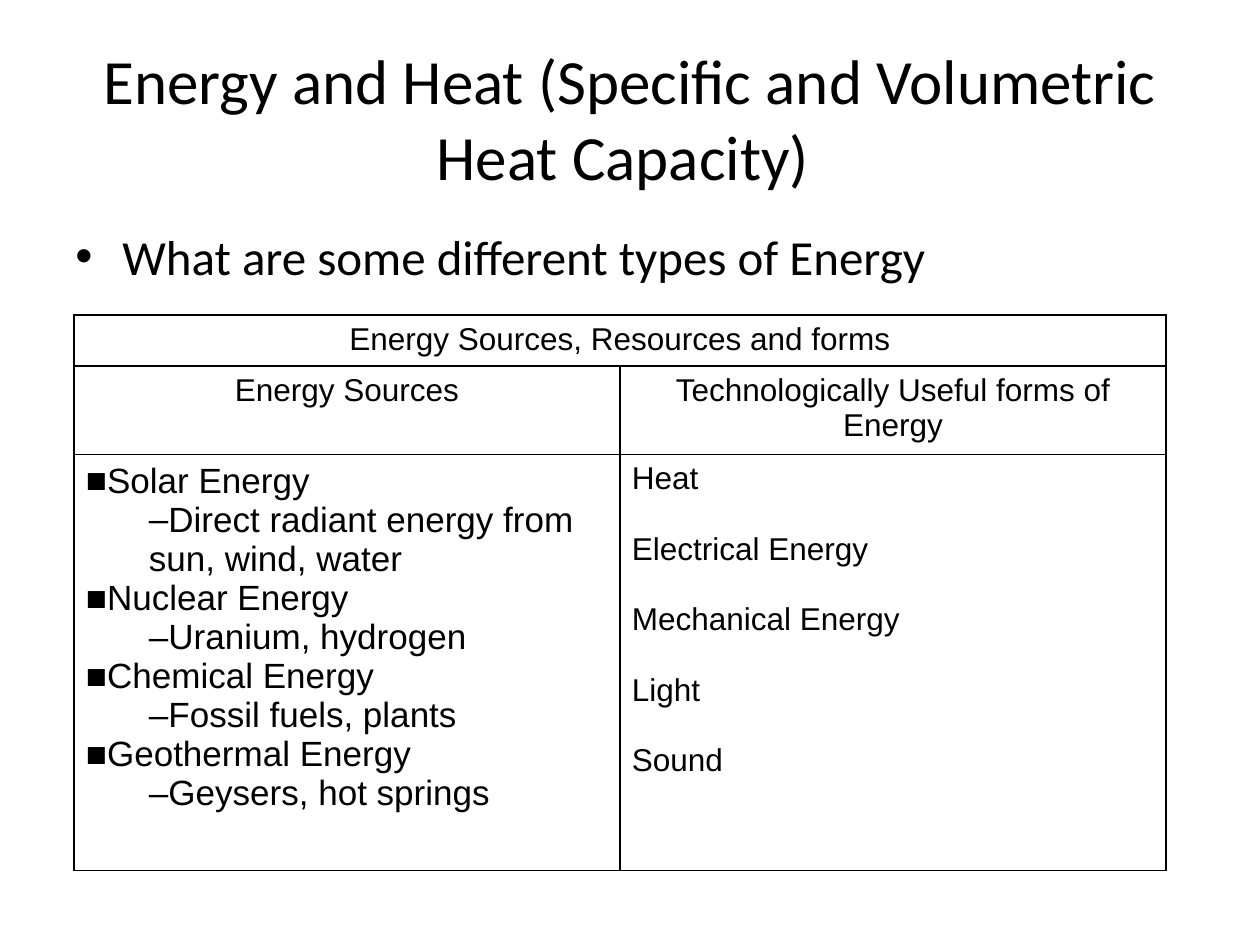
from lxml import etree
from pptx import Presentation
from pptx.dml.color import RGBColor
from pptx.enum.text import MSO_ANCHOR, PP_ALIGN
from pptx.oxml.ns import qn
from pptx.util import Emu, Pt

SCALE = 914400 / 126
BLACK = "000000"
BODY = {"size": Pt(18), "name": "Arial"}
SOURCE = {"size": Pt(20), "name": "Arial"}
CENTER = {"alignment": PP_ALIGN.CENTER}
GAP = {"space_before": Pt(20.1)}
MARGINS = {"margin_left": 12, "margin_right": 12, "margin_top": 7, "margin_bottom": 6}


def px(n):
    return Emu(round(n * SCALE))


def color(value):
    return RGBColor.from_string(value)


def apply(obj, values):
    for name, value in values.items():
        setattr(obj, name, value)


class SlideBuilder:
    def __init__(self, prs):
        self.s = prs.slides.add_slide(prs.slide_layouts[6])
        self.s.background.fill.solid()
        self.s.background.fill.fore_color.rgb = color("FFFFFF")

    def bullet(self, p, char, left=0, indent=0):
        pPr = p._p.get_or_add_pPr()
        pPr.set("marL", str(px(left)))
        pPr.set("indent", str(px(indent)))
        etree.SubElement(pPr, qn("a:buFont"), typeface="Arial")
        etree.SubElement(pPr, qn("a:buChar"), char=char)

    def paragraph(self, tf, text, font, layout=None, bullet=None):
        p = tf.add_paragraph() if tf.text else tf.paragraphs[0]
        apply(p, layout or {})
        if bullet:
            self.bullet(p, *bullet)
        r = p.add_run()
        r.text = text
        apply(r.font, font)
        r.font.color.rgb = color(BLACK)

    def text(self, box, text, font, layout=None, bullet=None, anchor=MSO_ANCHOR.TOP):
        tf = self.s.shapes.add_textbox(*map(px, box)).text_frame
        apply(tf, {"word_wrap": True, "vertical_anchor": anchor})
        self.paragraph(tf, text, font, layout, bullet)

    def borders(self, cell):
        tcPr = cell._tc.get_or_add_tcPr()
        for side in "LRTB":
            ln = etree.SubElement(tcPr, qn(f"a:ln{side}"), w=str(Pt(1)))
            fill = etree.SubElement(ln, qn("a:solidFill"))
            etree.SubElement(fill, qn("a:srgbClr"), val=BLACK)

    def table(self, box, heights, columns):
        sp = self.s.shapes.add_table(len(heights), columns, *map(px, box))
        table = sp.table
        apply(table, {"first_row": False, "horz_banding": False})
        for row, height in zip(table.rows, heights):
            row.height = px(height)
        for cell in table.iter_cells():
            self.borders(cell)
            cell.fill.background()
            apply(cell, {name: px(n) for name, n in MARGINS.items()})
        return table


def main():
    prs = Presentation()
    apply(prs, {"slide_width": px(1260), "slide_height": px(945)})
    slide = SlideBuilder(prs)

    slide.text((63, 38, 1134, 158), "Energy and Heat (Specific and Volumetric Heat Capacity) ",
               {"size": Pt(36), "name": "Calibri"}, CENTER, anchor=MSO_ANCHOR.MIDDLE)
    slide.text((63, 220, 1134, 84), "What are some different types of Energy",
               {"size": Pt(28), "name": "Calibri"}, {"space_before": Pt(5.6)}, ("•", 47, -47))

    table = slide.table((74, 315, 1092, 554), (50, 88, 416), 2)
    table.cell(0, 0).merge(table.cell(0, 1))
    headings = {
        (0, 0): "Energy Sources, Resources and forms",
        (1, 0): "Energy Sources",
        (1, 1): "Technologically Useful forms of Energy",
    }
    for place, heading in headings.items():
        slide.paragraph(table.cell(*place).text_frame, heading, BODY, CENTER)

    sources = {
        "Solar Energy": "Direct radiant energy from sun, wind, water",
        "Nuclear Energy": "Uranium, hydrogen",
        "Chemical Energy": "Fossil fuels, plants",
        "Geothermal Energy": "Geysers, hot springs",
    }
    tf = table.cell(2, 0).text_frame
    for source, examples in sources.items():
        slide.paragraph(tf, source, SOURCE, bullet=("■",))
        slide.paragraph(tf, examples, SOURCE, {"level": 1}, ("–", 63))

    forms = ("Heat", "Electrical Energy", "Mechanical Energy", "Light", "Sound")
    tf = table.cell(2, 1).text_frame
    for i, form in enumerate(forms):
        slide.paragraph(tf, form, BODY, GAP if i else None)

    prs.save("out.pptx")


if __name__ == "__main__":
    main()
